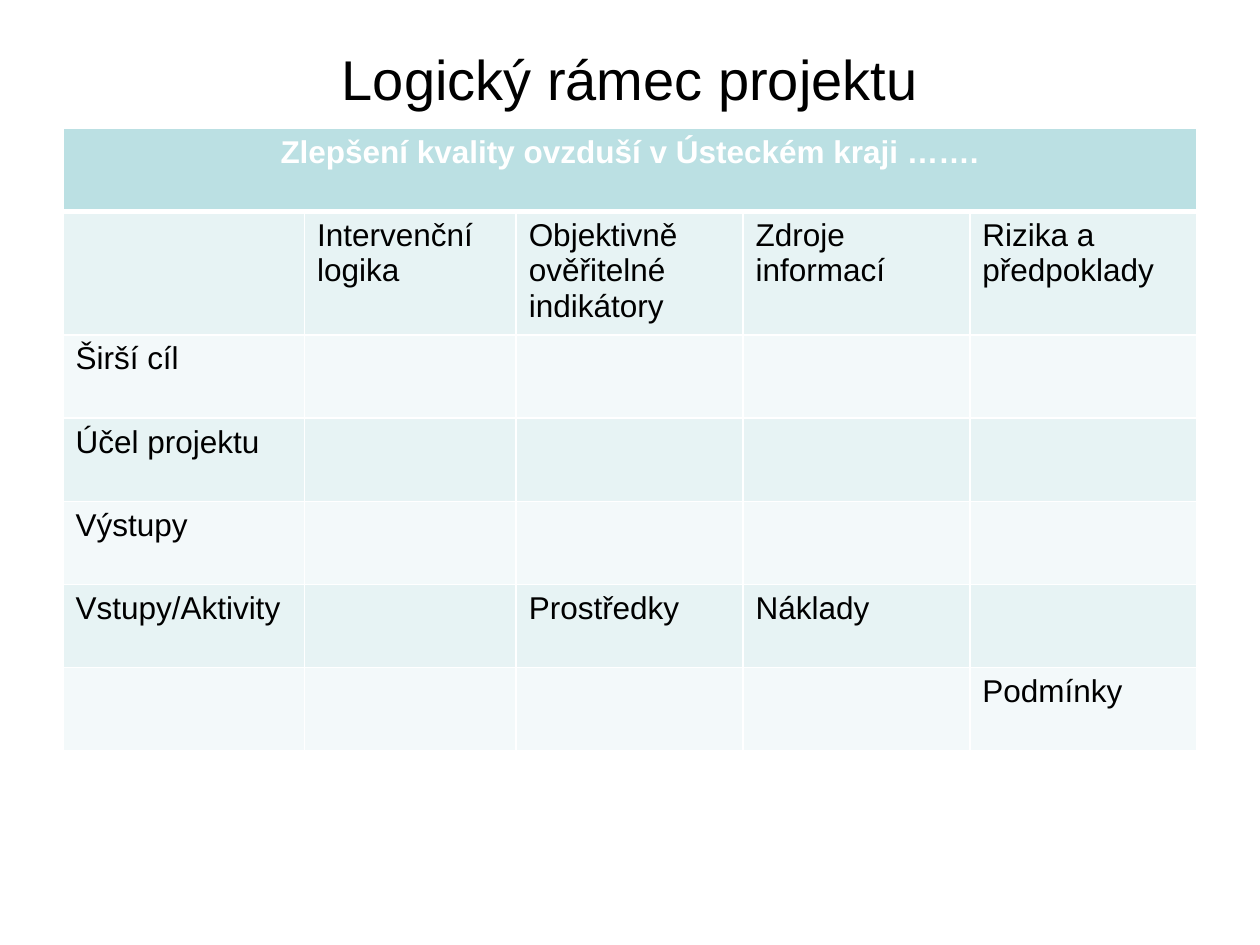
"""Build the slide with the logical framework matrix of the project."""
from dataclasses import dataclass

from lxml import etree
from pptx import Presentation
from pptx.dml.color import RGBColor
from pptx.enum.text import MSO_ANCHOR, PP_ALIGN
from pptx.oxml.ns import qn
from pptx.util import Pt

CENTER = PP_ALIGN.CENTER
LEFT = PP_ALIGN.LEFT
MIDDLE = MSO_ANCHOR.MIDDLE

BLACK = RGBColor(0x00, 0x00, 0x00)
WHITE = RGBColor(0xFF, 0xFF, 0xFF)
TEAL = RGBColor(0xBB, 0xE0, 0xE3)
BAND_DARK = RGBColor(0xE7, 0xF3, 0xF4)
BAND_LIGHT = RGBColor(0xF3, 0xF9, 0xFA)

TITLE_FONT = {"name": "Arial", "size": Pt(32), "bold": False}
BODY_FONT = {"name": "Arial", "size": Pt(18), "bold": False}
GOAL_FONT = {**BODY_FONT, "bold": True}

COLUMN_WIDTHS = (138, 121, 129.6, 129.6, 129.6)
ROW_HEIGHT = 47.5
HEADING_HEIGHT = 70.5
THIN, THICK = 1, 3


@dataclass(frozen=True)
class MatrixRow:
    """Texts by column and the height of one row."""

    texts: dict[int, str]
    height: float = ROW_HEIGHT


MATRIX = (
    MatrixRow({0: "Zlepšení kvality ovzduší v Ústeckém kraji ……."}),
    MatrixRow(
        {
            1: "Intervenční logika",
            2: "Objektivně ověřitelné indikátory",
            3: "Zdroje informací",
            4: "Rizika a předpoklady",
        },
        HEADING_HEIGHT,
    ),
    MatrixRow({0: "Širší cíl"}),
    MatrixRow({0: "Účel projektu"}),
    MatrixRow({0: "Výstupy"}),
    MatrixRow({0: "Vstupy/Aktivity", 2: "Prostředky", 3: "Náklady"}),
    MatrixRow({4: "Podmínky"}),
)


def format_text(paragraph, font_values: dict, color: RGBColor, alignment) -> None:
    """Apply font values, colour and alignment to a paragraph."""
    paragraph.alignment = alignment
    for attribute, value in font_values.items():
        setattr(paragraph.font, attribute, value)
    paragraph.font.color.rgb = color


def add_borders(cell, top: float, bottom: float) -> None:
    """Give a cell white borders with the given top and bottom widths."""
    properties = cell._tc.get_or_add_tcPr()
    widths = {"a:lnL": THIN, "a:lnR": THIN, "a:lnT": top, "a:lnB": bottom}
    for tag, width in widths.items():
        line = etree.SubElement(properties, qn(tag), w=str(Pt(width)))
        fill = etree.SubElement(line, qn("a:solidFill"))
        etree.SubElement(fill, qn("a:srgbClr"), val=str(WHITE))


def fill_row(table, index: int, row: MatrixRow) -> None:
    """Write and format one row of the matrix."""
    is_goal = index == 0
    band = TEAL if is_goal else BAND_DARK if index % 2 else BAND_LIGHT
    font_values = GOAL_FONT if is_goal else BODY_FONT
    color = WHITE if is_goal else BLACK
    alignment = CENTER if is_goal else LEFT
    table.rows[index].height = Pt(row.height)
    for column in range(len(COLUMN_WIDTHS)):
        cell = table.cell(index, column)
        add_borders(cell, THICK if index == 1 else THIN, THICK if is_goal else THIN)
        cell.fill.solid()
        cell.fill.fore_color.rgb = band
        cell.text = row.texts.get(column, "")
        format_text(cell.text_frame.paragraphs[0], font_values, color, alignment)


def add_title(slide, text: str) -> None:
    """Place and format the slide title."""
    title = slide.shapes.title
    place = {"left": Pt(36), "top": Pt(21.6), "width": Pt(648), "height": Pt(46)}
    for attribute, value in place.items():
        setattr(title, attribute, value)
    title.text_frame.text = text
    title.text_frame.vertical_anchor = MIDDLE
    format_text(title.text_frame.paragraphs[0], TITLE_FONT, BLACK, CENTER)


def add_matrix(slide) -> None:
    """Add the table with the merged goal row on top."""
    width = sum(COLUMN_WIDTHS)
    height = sum(row.height for row in MATRIX)
    table = slide.shapes.add_table(
        len(MATRIX), len(COLUMN_WIDTHS), Pt(36), Pt(73.5), Pt(width), Pt(height)
    ).table
    for column, column_width in zip(table.columns, COLUMN_WIDTHS):
        column.width = Pt(column_width)
    for index, row in enumerate(MATRIX):
        fill_row(table, index, row)
    table.cell(0, 0).merge(table.cell(0, len(COLUMN_WIDTHS) - 1))


def main() -> None:
    """Create and save the presentation."""
    presentation = Presentation()
    presentation.slide_width = Pt(720)
    presentation.slide_height = Pt(540)
    slide = presentation.slides.add_slide(presentation.slide_layouts[5])
    add_title(slide, "Logický rámec projektu")
    add_matrix(slide)
    presentation.save("out.pptx")


if __name__ == "__main__":
    main()
